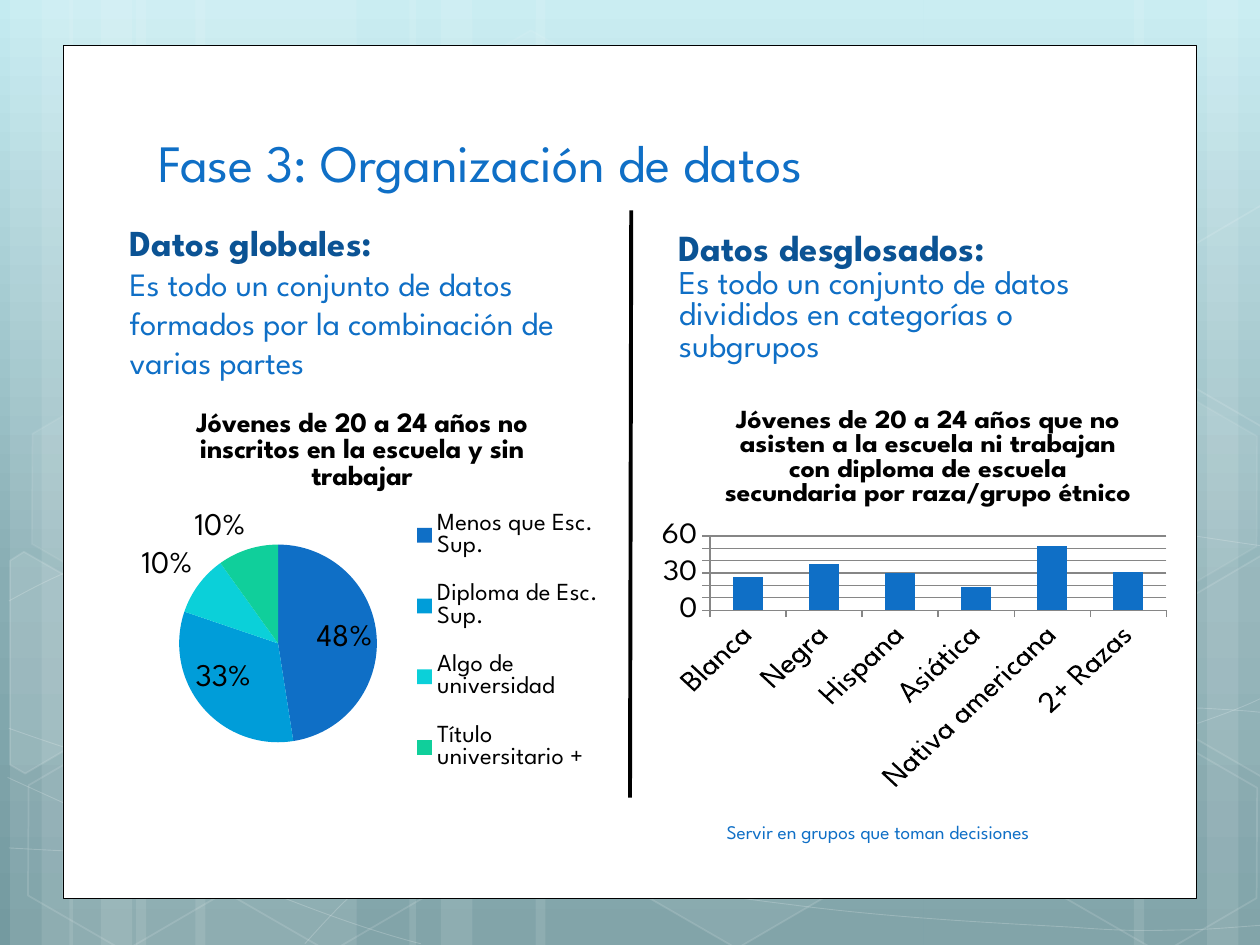
"""Build a slide that sets a pie of overall data beside columns of broken-down data."""
from dataclasses import dataclass
from typing import NamedTuple, Optional

from lxml import etree
from pptx import Presentation
from pptx import util as u
from pptx.chart.data import CategoryChartData
from pptx.dml.color import RGBColor
from pptx.enum import chart as ch, shapes as sh, text as tx
from pptx.oxml import parse_xml
from pptx.oxml.ns import nsdecls, qn

PX = 9144


@dataclass(frozen=True)
class Theme:
    font: str = "League Spartan"
    white: str = "FFFFFF"
    black: str = "000000"
    grey: str = "868686"
    blue: str = "0F6FC6"
    navy: str = "0B5394"
    slices: tuple = ("0F6FC6", "009DD9", "0BD0D9", "10CF9B")
    sky: tuple = ((0, "C4EBF1"), (62, "88ADB3"), (100, "749AA0"))
    title: float = 30
    foot: float = 11
    chart: float = 18
    head: float = 16
    key: float = 14


T = Theme()


class Box(NamedTuple):
    x: int
    y: int
    w: int
    h: int


class Ink(NamedTuple):
    fill: Optional[int]
    line: Optional[int] = None
    width: float = 1


class Hexa(NamedTuple):
    x: int
    y: int
    ink: Ink


class Path(NamedTuple):
    pts: tuple
    ink: Ink


class Para(NamedTuple):
    text: str
    size: float
    color: str
    bold: bool = False


BANDS = ((108, 175), (8, 50), (33, 83), (155, 175), (55, 50), (80, 83),
         (733, 175), (958, 50), (900, 83), (425, 308), (325, 50), (350, 83))
WAVE = Ink(None, 20, 0.5)
WAVES = (
    ((7, 673), (61, 676), (115, 679), (190, 678), (265, 677), (358, 675), (458, 665),
     (558, 655), (700, 636), (792, 617), (883, 598), (977, 568), (1007, 551)),
    ((7, 477), (36, 461), (65, 446), (121, 431), (178, 416), (259, 394), (347, 387),
     (436, 380), (544, 379), (654, 387), (764, 395), (947, 426), (1007, 434)),
    ((6, 617), (127, 672), (247, 727), (334, 749)),
    ((7, 578), (38, 589), (70, 600), (128, 616), (186, 631), (273, 656), (357, 673),
     (440, 690), (545, 708), (628, 718), (711, 729), (800, 733), (853, 736),
     (905, 740), (919, 738), (945, 738), (971, 737), (989, 735), (1007, 734)),
    ((242, 749), (260, 729), (278, 709), (302, 691), (326, 673), (360, 653), (388, 639),
     (416, 625), (433, 619), (470, 609), (506, 599), (573, 585), (608, 578),
     (644, 571), (649, 571), (680, 569), (711, 566), (760, 563), (794, 562),
     (829, 561), (886, 562), (886, 562), (886, 562), (953, 562), (953, 562),
     (971, 563), (988, 564), (997, 565), (1006, 566), (1003, 565), (1006, 566)),
)
HEXAS = (Hexa(334, 36, Ink(4, 8)), Hexa(497, 589, Ink(6, 12)),
         Hexa(11, 591, Ink(None, 12)), Hexa(14, 312, Ink(7, 8)),
         Hexa(174, 592, Ink(None, 12)), Hexa(753, 453, Ink(10, 12)),
         Hexa(834, 593, Ink(None, 12)), Hexa(834, 314, Ink(7, 8)))
CUTS = (
    Path(((8, 445), (19, 438), (96, 482), (95, 570), (20, 614), (8, 607)), Ink(10, 12)),
    Path(((926, 485), (1001, 441), (1009, 446), (1009, 613), (1002, 617), (926, 573)), Ink(4, 12)),
    Path(((926, 207), (1001, 163), (1010, 168), (1009, 335), (1002, 339), (926, 295)),
         Ink(None, 12)),
)


def rgb(code: str) -> RGBColor:
    return RGBColor.from_string(code)


def emu(box: Box) -> list:
    return [u.Emu(n * PX) for n in box]


def fade(fill, node, part: int) -> None:
    fill.solid()
    fill.fore_color.rgb = rgb(T.white)
    if part < 100:
        tone = node.find(qn("a:solidFill"))[0]
        etree.SubElement(tone, qn("a:alpha")).set("val", str(part * 1000))


def tint(shape, ink: Ink) -> None:
    shape.shadow.inherit = False
    if ink.fill is None:
        shape.fill.background()
    else:
        fade(shape.fill, shape._element.spPr, ink.fill)
    if ink.line is None:
        shape.line.fill.background()
    else:
        shape.line.width = u.Pt(ink.width)
        fade(shape.line.fill, shape.line._get_or_add_ln(), ink.line)


def bend(shape) -> None:
    track = shape._element.spPr.find(".//" + qn("a:path"))
    legs = track.findall(qn("a:lnTo"))
    for i in range(0, len(legs), 3):
        arc = etree.SubElement(track, qn("a:cubicBezTo"))
        for leg in legs[i:i + 3]:
            arc.append(leg[0])
            track.remove(leg)


def trace(slide, path: Path, curved: bool) -> None:
    pen = slide.shapes.build_freeform(*path.pts[0], scale=PX)
    pen.add_line_segments(path.pts[1:], close=not curved)
    shape = pen.convert_to_shape()
    if curved:
        bend(shape)
    tint(shape, path.ink)


def scene(slide) -> None:
    slide.background.fill.gradient()
    grad = slide._element.cSld.find(".//" + qn("a:gradFill"))
    for node in list(grad):
        grad.remove(node)
    stops = "".join(f'<a:gs pos="{p * 1000}"><a:srgbClr val="{c}"/></a:gs>' for p, c in T.sky)
    grad.append(parse_xml(f'<a:gsLst {nsdecls("a")}>{stops}</a:gsLst>'))
    grad.append(parse_xml(f'<a:lin {nsdecls("a")} ang="5400000" scaled="0"/>'))
    for x, w in BANDS:
        tint(slide.shapes.add_shape(sh.MSO_SHAPE.RECTANGLE, *emu(Box(x, 0, w, 750))), Ink(10))
    for wave in WAVES:
        trace(slide, Path(wave, WAVE), True)
    for hexa in HEXAS:
        cell = slide.shapes.add_shape(sh.MSO_SHAPE.HEXAGON, *emu(Box(hexa.x, hexa.y, 175, 152)))
        cell.adjustments[0] = 0.285
        cell.rotation = 30
        tint(cell, hexa.ink)
    for cut in CUTS:
        trace(slide, cut, False)
    panel = slide.shapes.add_shape(sh.MSO_SHAPE.RECTANGLE, *emu(Box(50, 36, 900, 677)))
    tint(panel, Ink(100, 100, 0.5))
    panel.line.color.rgb = rgb(T.black)


def style(font, size: float, color: str, bold: bool = False) -> None:
    font.name, font.size, font.bold = T.font, u.Pt(size), bold
    font.color.rgb = rgb(color)


def write(slide, box: Box, paras: tuple, gap: float = 1, mid: bool = False) -> None:
    frame = slide.shapes.add_textbox(*emu(box)).text_frame
    frame.word_wrap = True
    frame.vertical_anchor = tx.MSO_ANCHOR.MIDDLE if mid else tx.MSO_ANCHOR.BOTTOM
    for i, para in enumerate(paras):
        line = frame.add_paragraph() if i else frame.paragraphs[0]
        line.text = para.text
        line.line_spacing = gap
        line.alignment = tx.PP_ALIGN.CENTER if mid else tx.PP_ALIGN.LEFT
        style(line.font, para.size, para.color, para.bold)


def place(node, at: int, inner: bool = False, **spots: float) -> None:
    for old in node.findall(qn("c:layout")):
        node.remove(old)
    rows = '<c:layoutTarget val="inner"/>' if inner else ""
    rows += '<c:xMode val="edge"/><c:yMode val="edge"/>'
    rows += "".join(f'<c:{k} val="{v}"/>' for k, v in spots.items())
    node.insert(at, parse_xml(
        f'<c:layout {nsdecls("c")}><c:manualLayout>{rows}</c:manualLayout></c:layout>'))


def graph(slide, kind, box: Box, title: str, data: dict, left: float, top: float):
    feed = CategoryChartData()
    feed.categories = list(data)
    feed.add_series("Series 1", list(data.values()))
    chart = slide.shapes.add_chart(kind, *emu(box), feed).chart
    style(chart.font, T.chart, T.black)
    chart.has_title = True
    line = chart.chart_title.text_frame.paragraphs[0]
    line.text = title
    style(line.font, T.head, T.black, True)
    place(chart.chart_title._element, 1, x=left, y=top)
    chart.has_legend = False
    return chart


def pie(slide) -> None:
    data = {"Menos que Esc. Sup.": 48, "Diploma de Esc. Sup.": 33,
            "Algo de universidad": 10, "Título universitario +": 10}
    chart = graph(slide, ch.XL_CHART_TYPE.PIE, Box(83, 308, 405, 327),
                  "Jóvenes de 20 a 24 años no inscritos en la escuela y sin trabajar",
                  data, 0.17, 0.04)
    place(chart._chartSpace.chart.plotArea, 0, True, x=0.14, y=0.38, w=0.4, h=0.48)
    chart.has_legend = True
    chart.legend.position = ch.XL_LEGEND_POSITION.RIGHT
    chart.legend.include_in_layout = False
    style(chart.legend.font, T.key, T.black)
    place(chart.legend._element, 1, x=0.6, y=0.24, w=0.38, h=0.75)
    for i, color in enumerate(T.slices):
        fill = chart.series[0].points[i].format.fill
        fill.solid()
        fill.fore_color.rgb = rgb(color)
    tags = chart.series[0].data_labels
    tags.show_percentage, tags.show_value = True, False
    tags.position = ch.XL_LABEL_POSITION.BEST_FIT


def bars(slide) -> None:
    data = {"Blanca": 27, "Negra": 37, "Hispana": 30, "Asiática": 19,
            "Nativa americana": 52, "2+ Razas": 31}
    chart = graph(slide, ch.XL_CHART_TYPE.COLUMN_CLUSTERED, Box(517, 319, 417, 310),
                  "Jóvenes de 20 a 24 años que no asisten a la escuela ni trabajan con "
                  "diploma de escuela secundaria por raza/grupo étnico", data, 0.13, -0.01)
    plot = chart.plots[0]
    plot.gap_width, plot.vary_by_categories = 150, False
    fill = plot.series[0].format.fill
    fill.solid()
    fill.fore_color.rgb = rgb(T.blue)
    rule = chart.value_axis
    rule.minimum_scale, rule.maximum_scale, rule.major_unit = 0, 60, 10
    rule.has_major_gridlines = True
    for part in (rule, chart.category_axis, rule.major_gridlines):
        part.format.line.color.rgb = rgb(T.grey)
    for axis in (rule, chart.category_axis):
        axis.major_tick_mark = ch.XL_TICK_MARK.OUTSIDE
        style(axis.tick_labels.font, T.chart, T.black)
    chart.category_axis._element.txPr.bodyPr.set("rot", "-2700000")


def main() -> None:
    deck = Presentation()
    deck.slide_width, deck.slide_height = u.Emu(1000 * PX), u.Emu(750 * PX)
    slide = deck.slides.add_slide(deck.slide_layouts[6])
    scene(slide)
    write(slide, Box(116, 75, 768, 83), (Para("Fase 3: Organización de datos", T.title, T.blue),))
    write(slide, Box(503, 640, 388, 40),
          (Para("Servir en grupos que toman decisiones", T.foot, T.blue),), mid=True)
    write(slide, Box(529, 158, 392, 136), (
        Para("Datos desglosados:", 21, T.navy, True),
        Para("Es todo un conjunto de datos divididos en categorías o subgrupos", 19, T.blue)), 0.8)
    write(slide, Box(93, 167, 405, 140), (
        Para("Datos globales:", 20.9, T.navy, True),
        Para("Es todo un conjunto de datos formados por la combinación de varias partes",
             18.6, T.blue)))
    rule = slide.shapes.add_connector(sh.MSO_CONNECTOR.STRAIGHT, *emu(Box(501, 167, 500, 633)))
    rule.line.width = u.Pt(2.25)
    rule.line.color.rgb = rgb(T.black)
    etree.SubElement(rule._element.spPr, qn("a:effectLst"))
    pie(slide)
    bars(slide)
    deck.save("out.pptx")


if __name__ == "__main__":
    main()
